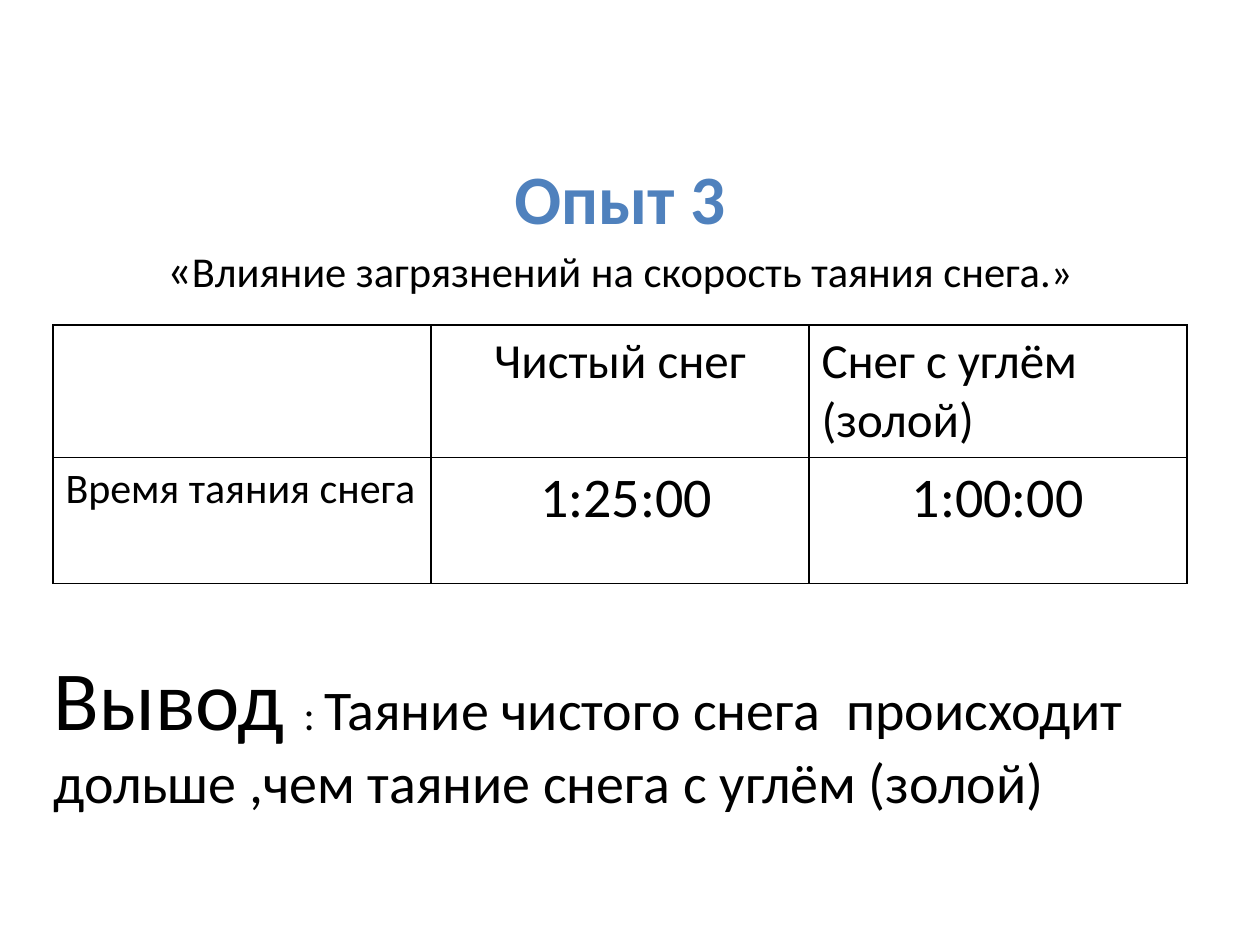
"""Build the slide on how dirt changes the melting time of snow."""
from lxml import etree
from pptx import Presentation
from pptx.dml.color import RGBColor
from pptx.enum.text import MSO_ANCHOR, PP_ALIGN
from pptx.oxml.ns import qn
from pptx.util import Inches, Pt

LEFT, CENTER = PP_ALIGN.LEFT, PP_ALIGN.CENTER
MIDDLE, TOP = MSO_ANCHOR.MIDDLE, MSO_ANCHOR.TOP
BLACK = RGBColor(0x00, 0x00, 0x00)
BLUE = RGBColor(0x4F, 0x81, 0xBD)
FONT = "Calibri"
COLUMN, ROW = Inches(3), Inches(1)
TABLE_LEFT = Inches(0.42)
BORDER = Pt(1)


def add_text(box, anchor, alignment, lines):
    frame = slide.shapes.add_textbox(*box).text_frame
    frame.word_wrap = True
    frame.vertical_anchor = anchor
    paragraph = frame.paragraphs[0]
    paragraph.alignment = alignment
    paragraph.font.name = FONT
    for number, line in enumerate(lines):
        if number:
            paragraph.add_line_break()
        for text, size, color, bold in line:
            run = paragraph.add_run()
            run.text = text
            run.font.size = Pt(size)
            run.font.color.rgb = color
            run.font.bold = bold


def add_borders(cell):
    properties = cell._tc.get_or_add_tcPr()
    for position, side in enumerate(("a:lnL", "a:lnR", "a:lnT", "a:lnB")):
        line = etree.Element(qn(side), w=str(BORDER))
        fill = etree.SubElement(line, qn("a:solidFill"))
        etree.SubElement(fill, qn("a:srgbClr"), val=str(BLACK))
        properties.insert(position, line)


presentation = Presentation()
presentation.slide_width, presentation.slide_height = Inches(10), Inches(7.5)
slide = presentation.slides.add_slide(presentation.slide_layouts[6])

cells = [
    [("", 28, LEFT), ("Чистый снег", 28, CENTER), ("Снег с углём (золой)", 28, LEFT)],
    [("Время таяния снега", 24, LEFT), (" 1:25:00", 32, CENTER), ("1:00:00", 32, CENTER)],
]
frame = slide.shapes.add_table(2, 3, TABLE_LEFT, Inches(2.58), 3 * COLUMN, 2 * ROW)
table = frame.table
table.first_row = table.horz_banding = False
for row_number, row in enumerate(cells):
    for column_number, (text, size, alignment) in enumerate(row):
        cell = table.cell(row_number, column_number)
        cell.text = text
        cell.fill.background()
        add_borders(cell)
        paragraph = cell.text_frame.paragraphs[0]
        paragraph.alignment = alignment
        paragraph.font.name = FONT
        paragraph.font.size = Pt(size)
        paragraph.font.color.rgb = BLACK

add_text(
    (TABLE_LEFT, Inches(1.17), 3 * COLUMN, Inches(1.25)), MIDDLE, CENTER,
    [
        [("Опыт 3", 39.6, BLUE, True)],
        [
            ("«", 27.9, BLACK, False),
            ("Влияние загрязнений на скорость таяния снега.»", 24.3, BLACK, False),
        ],
    ],
)
add_text(
    (Inches(0.33), Inches(5.08), Inches(9.33), Inches(1.45)), TOP, LEFT,
    [[
        ("Вывод ", 48, BLACK, False),
        (": ", 24, BLACK, False),
        ("Таяние чистого снега  происходит дольше ,чем таяние снега с углём (золой)",
         32, BLACK, False),
    ]],
)

presentation.save("out.pptx")
